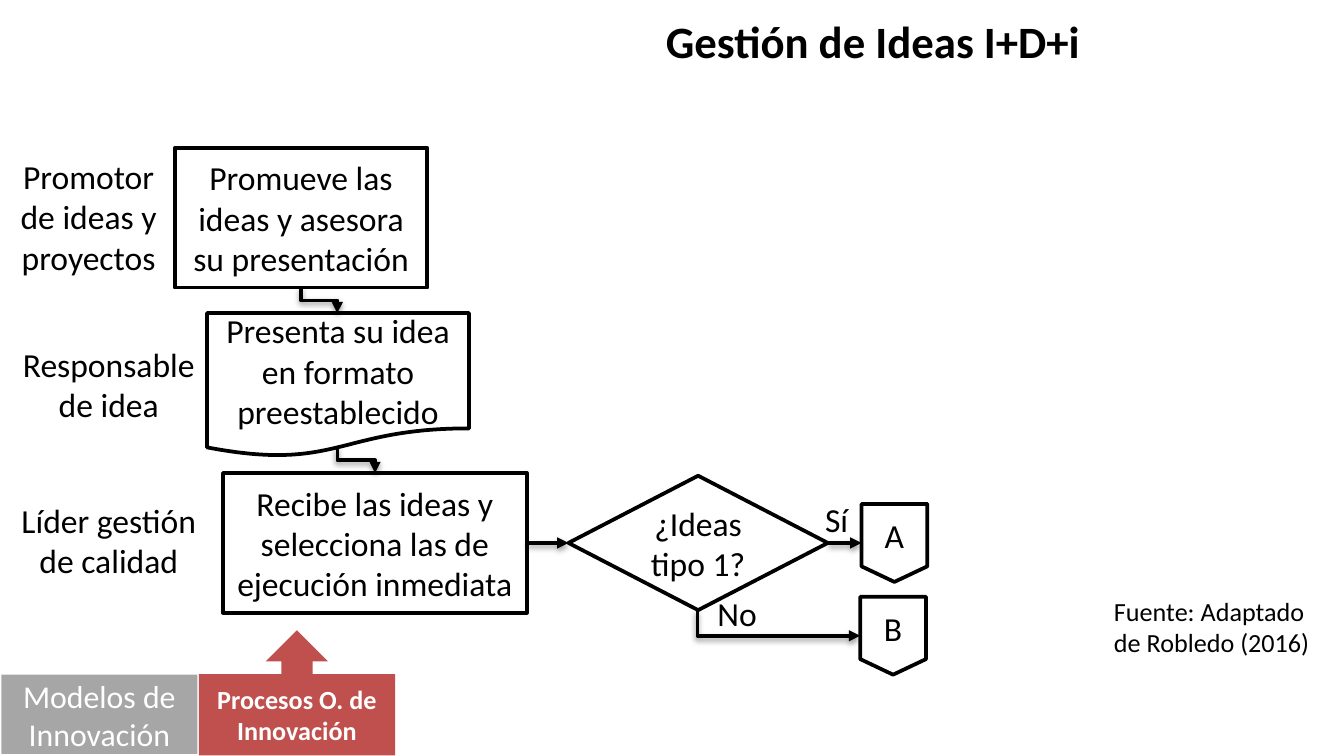
from dataclasses import dataclass

from lxml import etree
from pptx import Presentation
from pptx import util as u
from pptx.dml.color import RGBColor
from pptx.enum import shapes, text
from pptx.oxml import ns

PRESET = shapes.MSO_SHAPE
ALIGN = text.PP_ALIGN
TOP, LEFT, BOTTOM, RIGHT = range(4)
SLIDE_WIDTH = 10
SLIDE_HEIGHT = SLIDE_WIDTH * 9 / 16


@dataclass(frozen=True)
class Theme:
    font: str = "Calibri"
    ink: str = "000000"
    paper: str = "FFFFFF"
    inactive: str = "A6A6A6"
    active: str = "C0504D"
    title: float = 24
    body: float = 18
    tab: float = 17
    small: float = 14
    stroke: float = 2


THEME = Theme()


@dataclass(frozen=True)
class Area:
    left: float
    top: float
    width: float
    height: float

    def lengths(self):
        return [u.Inches(v) for v in (self.left, self.top, self.width, self.height)]


@dataclass(frozen=True)
class Label:
    words: str
    area: Area
    align: ALIGN = ALIGN.CENTER
    size: float = THEME.body
    bold: bool = False
    wrap: bool = True


@dataclass(frozen=True)
class Step:
    words: str
    preset: PRESET
    area: Area


@dataclass(frozen=True)
class Tab:
    words: str
    preset: PRESET
    area: Area
    fill: str
    size: float
    bold: bool = False


@dataclass(frozen=True)
class Elbow:
    start: tuple[float, float]
    end: tuple[float, float]
    geometry: str


LABELS = [
    Label("Gestión de Ideas I+D+i", Area(2.99, 0.05, 7.01, 0.5), size=THEME.title, bold=True),
    Label("Promotor de ideas y proyectos", Area(0.01, 1.11, 1.3, 1.01)),
    Label("Responsable de idea", Area(0.01, 2.51, 1.6, 0.71)),
    Label("Líder gestión de calidad", Area(0.01, 3.67, 1.6, 0.71)),
    Label("Sí", Area(6.04, 3.66, 0.38, 0.4), ALIGN.LEFT, wrap=False),
    Label("No", Area(5.24, 4.36, 0.5, 0.4), ALIGN.LEFT, wrap=False),
    Label("Fuente: Adaptado de Robledo (2016)", Area(8.19, 4.38, 1.82, 0.57),
          ALIGN.LEFT, THEME.small),
]

STEPS = {
    "promote": Step("Promueve las ideas y asesora su presentación",
                    PRESET.RECTANGLE, Area(1.3, 1.1, 1.88, 1.04)),
    "present": Step("Presenta su idea en formato preestablecido",
                    PRESET.FLOWCHART_DOCUMENT, Area(1.54, 2.33, 1.95, 1.07)),
    "select": Step("Recibe las ideas y selecciona las de ejecución inmediata",
                   PRESET.RECTANGLE, Area(1.66, 3.52, 2.26, 1.04)),
    "decide": Step("¿Ideas tipo 1?",
                   PRESET.FLOWCHART_DECISION, Area(4.23, 3.54, 1.93, 1)),
    "exit_a": Step("A", PRESET.FLOWCHART_OFFPAGE_CONNECTOR, Area(6.41, 3.75, 0.49, 0.58)),
    "exit_b": Step("B", PRESET.FLOWCHART_OFFPAGE_CONNECTOR, Area(6.4, 4.44, 0.49, 0.58)),
}

STRAIGHT_FLOWS = [("select", "decide"), ("decide", "exit_a")]

ELBOWS = [
    Elbow((2.24, 2.14), (2.51, 2.33), "bentConnector3"),
    Elbow((2.51, 3.33), (2.79, 3.52), "bentConnector3"),
    Elbow((5.19, 4.54), (6.4, 4.73), "bentConnector2"),
]

TABS = [
    Tab("Modelos de Innovación", PRESET.RECTANGLE, Area(0.01, 5.02, 1.46, 0.59),
        THEME.inactive, THEME.tab),
    Tab("Procesos O. de Innovación", PRESET.UP_ARROW_CALLOUT, Area(1.48, 4.69, 1.46, 0.93),
        THEME.active, THEME.small, True),
]


def rgb(value: str) -> RGBColor:
    return RGBColor.from_string(value)


def write(frame, words: str, *, size=THEME.body, color=THEME.ink, bold=False,
          align=ALIGN.CENTER, anchor=text.MSO_ANCHOR.MIDDLE, wrap=True) -> None:
    frame.word_wrap = wrap
    frame.vertical_anchor = anchor
    paragraph = frame.paragraphs[0]
    paragraph.alignment = align
    run = paragraph.add_run()
    run.text = words
    run.font.name = THEME.font
    run.font.size = u.Pt(size)
    run.font.bold = bold
    run.font.color.rgb = rgb(color)


def draw_label(slide, label: Label) -> None:
    box = slide.shapes.add_textbox(*label.area.lengths())
    write(box.text_frame, label.words, size=label.size, bold=label.bold,
          align=label.align, anchor=text.MSO_ANCHOR.TOP, wrap=label.wrap)


def draw_shape(slide, preset: PRESET, area: Area, fill: str):
    shape = slide.shapes.add_shape(preset, *area.lengths())
    shape.shadow.inherit = False
    shape.fill.solid()
    shape.fill.fore_color.rgb = rgb(fill)
    return shape


def draw_step(slide, step: Step):
    shape = draw_shape(slide, step.preset, step.area, THEME.paper)
    shape.line.color.rgb = rgb(THEME.ink)
    shape.line.width = u.Pt(THEME.stroke)
    write(shape.text_frame, step.words)
    return shape


def draw_tab(slide, tab: Tab) -> None:
    shape = draw_shape(slide, tab.preset, tab.area, tab.fill)
    shape.line.fill.background()
    write(shape.text_frame, tab.words, size=tab.size, color=THEME.paper, bold=tab.bold)


def style_flow(flow) -> None:
    flow.line.color.rgb = rgb(THEME.ink)
    flow.line.width = u.Pt(THEME.stroke)
    properties = flow._element.spPr
    etree.SubElement(properties.find(ns.qn("a:ln")), ns.qn("a:tailEnd"), type="triangle")
    effects = etree.SubElement(properties, ns.qn("a:effectLst"))
    shadow = etree.SubElement(effects, ns.qn("a:outerShdw"), blurRad=str(u.Pt(3.1)),
                              dist=str(u.Pt(1.6)), dir="5400000", rotWithShape="0")
    tint = etree.SubElement(shadow, ns.qn("a:srgbClr"), val=THEME.ink)
    etree.SubElement(tint, ns.qn("a:alpha"), val="38000")


def draw_straight(slide, source, target) -> None:
    flow = slide.shapes.add_connector(shapes.MSO_CONNECTOR.STRAIGHT, 0, 0, 0, 0)
    flow.begin_connect(source, RIGHT)
    flow.end_connect(target, LEFT)
    style_flow(flow)


def draw_elbow(slide, elbow: Elbow) -> None:
    (x1, y1), (x2, y2) = elbow.start, elbow.end
    center_x, center_y = (x1 + x2) / 2, (y1 + y2) / 2
    half_run, half_drop = (x2 - x1) / 2, (y2 - y1) / 2
    corners = (center_x - half_drop, center_y - half_run,
               center_x + half_drop, center_y + half_run)
    flow = slide.shapes.add_connector(shapes.MSO_CONNECTOR.ELBOW, *map(u.Inches, corners))
    properties = flow._element.spPr
    properties.find(ns.qn("a:prstGeom")).set("prst", elbow.geometry)
    transform = properties.find(ns.qn("a:xfrm"))
    transform.set("rot", "16200000")
    transform.set("flipH", "1")
    style_flow(flow)


def main() -> None:
    deck = Presentation()
    deck.slide_width, deck.slide_height = u.Inches(SLIDE_WIDTH), u.Inches(SLIDE_HEIGHT)
    slide = deck.slides.add_slide(deck.slide_layouts[6])
    drawn = {key: draw_step(slide, step) for key, step in STEPS.items()}
    for source, target in STRAIGHT_FLOWS:
        draw_straight(slide, drawn[source], drawn[target])
    for elbow in ELBOWS:
        draw_elbow(slide, elbow)
    for label in LABELS:
        draw_label(slide, label)
    for tab in TABS:
        draw_tab(slide, tab)
    deck.save("out.pptx")


if __name__ == "__main__":
    main()
